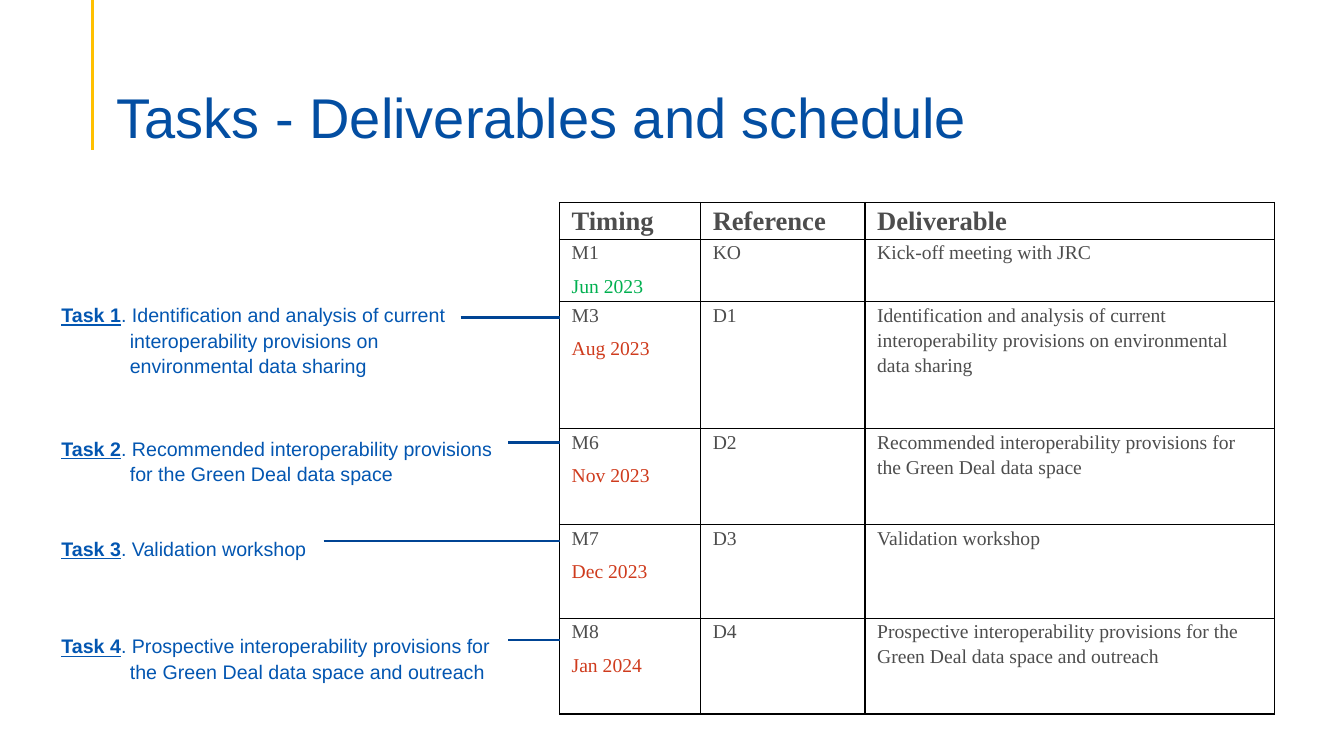
from lxml import etree
from pptx import Presentation
from pptx.dml.color import RGBColor
from pptx.enum.shapes import MSO_CONNECTOR
from pptx.enum.text import MSO_ANCHOR, PP_ALIGN
from pptx.oxml.ns import qn
from pptx.util import Inches, Pt

LINE = MSO_CONNECTOR.STRAIGHT
BOTTOM = MSO_ANCHOR.BOTTOM
LEFT, JUST = PP_ALIGN.LEFT, PP_ALIGN.JUSTIFY

COLORS = {
    "title": "034EA2", "accent": "FFC000", "task": "0356B1", "link": "004494",
    "body": "4D4D4D", "done": "00B050", "due": "CF3B1D", "grid": "000000",
}
SANS, SERIF = "Arial", "Times New Roman"

TITLE = "Tasks - Deliverables and schedule"
HEADS = ("Timing", "Reference", "Deliverable")
ROWS = [
    ("M1", "Jun 2023", "KO", "Kick-off meeting with JRC"),
    ("M3", "Aug 2023", "D1", "Identification and analysis of current "
     "interoperability provisions on environmental data sharing"),
    ("M6", "Nov 2023", "D2", "Recommended interoperability provisions for "
     "the Green Deal data space"),
    ("M7", "Dec 2023", "D3", "Validation workshop"),
    ("M8", "Jan 2024", "D4", "Prospective interoperability provisions for "
     "the Green Deal data space and outreach"),
]
GAPS = (0, 41, 35, 51.7)
LINKS = [(4.57, 3.15), (5.04, 4.39), (3.21, 5.37), (5.04, 6.35)]
GRID_X, GRID_Y = 5.55, 2.01
WIDTHS = (1.4, 1.63, 4.06)
HEIGHTS = (0.34, 0.58, 1.26, 0.95, 0.93, 0.95)


def style(run, face, size, color, bold=False):
    """Format one run."""
    font = run.font
    font.name, font.size, font.bold = face, Pt(size), bold
    font.color.rgb = RGBColor.from_string(COLORS[color])


def add_box(slide, left, top, width, height):
    """Add a wrapping text box and return its frame."""
    frame = slide.shapes.add_textbox(*map(Inches, (left, top, width, height))).text_frame
    frame.word_wrap = True
    return frame


def add_line(slide, start, end, color, weight):
    """Draw a straight line without a shadow."""
    line = slide.shapes.add_connector(LINE, *map(Inches, start + end))
    line.line.color.rgb = RGBColor.from_string(COLORS[color])
    line.line.width = Pt(weight)
    etree.SubElement(line._element.spPr, qn("a:effectLst"))


def add_title(slide):
    """Add the heading and its accent line."""
    add_line(slide, (0.92, 0), (0.92, 1.49), "accent", 2.25)
    frame = add_box(slide, 1.06, 0.63, 11.22, 0.86)
    frame.vertical_anchor, frame.margin_bottom = BOTTOM, 0
    frame.text = TITLE
    para = frame.paragraphs[0]
    para.line_spacing = 0.9
    style(para.runs[0], SANS, 40, "title")


def add_edges(cell):
    """Give a cell thin borders on all sides."""
    props = cell._tc.get_or_add_tcPr()
    for spot, side in enumerate(("lnL", "lnR", "lnT", "lnB")):
        edge = etree.Element(qn("a:" + side), w=str(Pt(1)))
        fill = etree.SubElement(edge, qn("a:solidFill"))
        etree.SubElement(fill, qn("a:srgbClr"), val=COLORS["grid"])
        props.insert(spot, edge)


def fill_cell(cell, lines, size, bold, align):
    """Write (text, color) lines into a table cell."""
    cell.fill.background()
    cell.margin_left = cell.margin_right = Inches(0.12)
    cell.margin_top = cell.margin_bottom = 0
    frame = cell.text_frame
    frame.text = "\n".join(text for text, _ in lines)
    for para, (_, color) in zip(frame.paragraphs, lines):
        para.alignment, para.line_spacing = align, 1.15
        para.space_after = Pt(6)
        style(para.runs[0], SERIF, size, color, bold)
    add_edges(cell)


def add_grid(slide):
    """Add the schedule table."""
    table = slide.shapes.add_table(
        len(HEIGHTS), len(WIDTHS), Inches(GRID_X), Inches(GRID_Y),
        Inches(sum(WIDTHS)), Inches(sum(HEIGHTS))).table
    table.horz_banding = False
    for col, width in zip(table.columns, WIDTHS):
        col.width = Inches(width)
    for row, height in zip(table.rows, HEIGHTS):
        row.height = Inches(height)
    for c, head in enumerate(HEADS):
        fill_cell(table.cell(0, c), [(head, "body")], 19, True, JUST)
    for r, (month, date, code, name) in enumerate(ROWS, 1):
        tint = "done" if r == 1 else "due"
        fill_cell(table.cell(r, 0), [(month, "body"), (date, tint)], 14, False, JUST)
        fill_cell(table.cell(r, 1), [(code, "body")], 14, False, JUST)
        fill_cell(table.cell(r, 2), [(name, "body")], 14, False, LEFT)


def add_tasks(slide):
    """List the tasks and link each one to the table."""
    frame = add_box(slide, 0.51, 2.94, 4.53, 3.85)
    for n, (gap, row) in enumerate(zip(GAPS, ROWS[1:]), 1):
        para = frame.paragraphs[0] if n == 1 else frame.add_paragraph()
        props = para._p.get_or_add_pPr()
        props.set("marL", str(Inches(0.68)))
        props.set("indent", str(Inches(-0.68)))
        para.line_spacing, para.space_before = 1.08, Pt(gap)
        label, name = para.add_run(), para.add_run()
        label.text, name.text = f"Task {n}", f". {row[-1]}"
        style(label, SANS, 14, "task", True)
        label.font.underline = True
        style(name, SANS, 14, "task")
    for x, y in LINKS:
        add_line(slide, (x, y), (GRID_X, y), "link", 1.5)


def main():
    """Build and save the slide."""
    deck = Presentation()
    deck.slide_width, deck.slide_height = Inches(13.33), Inches(7.5)
    slide = deck.slides.add_slide(deck.slide_layouts[6])
    add_title(slide)
    add_grid(slide)
    add_tasks(slide)
    deck.save("out.pptx")


if __name__ == "__main__":
    main()
